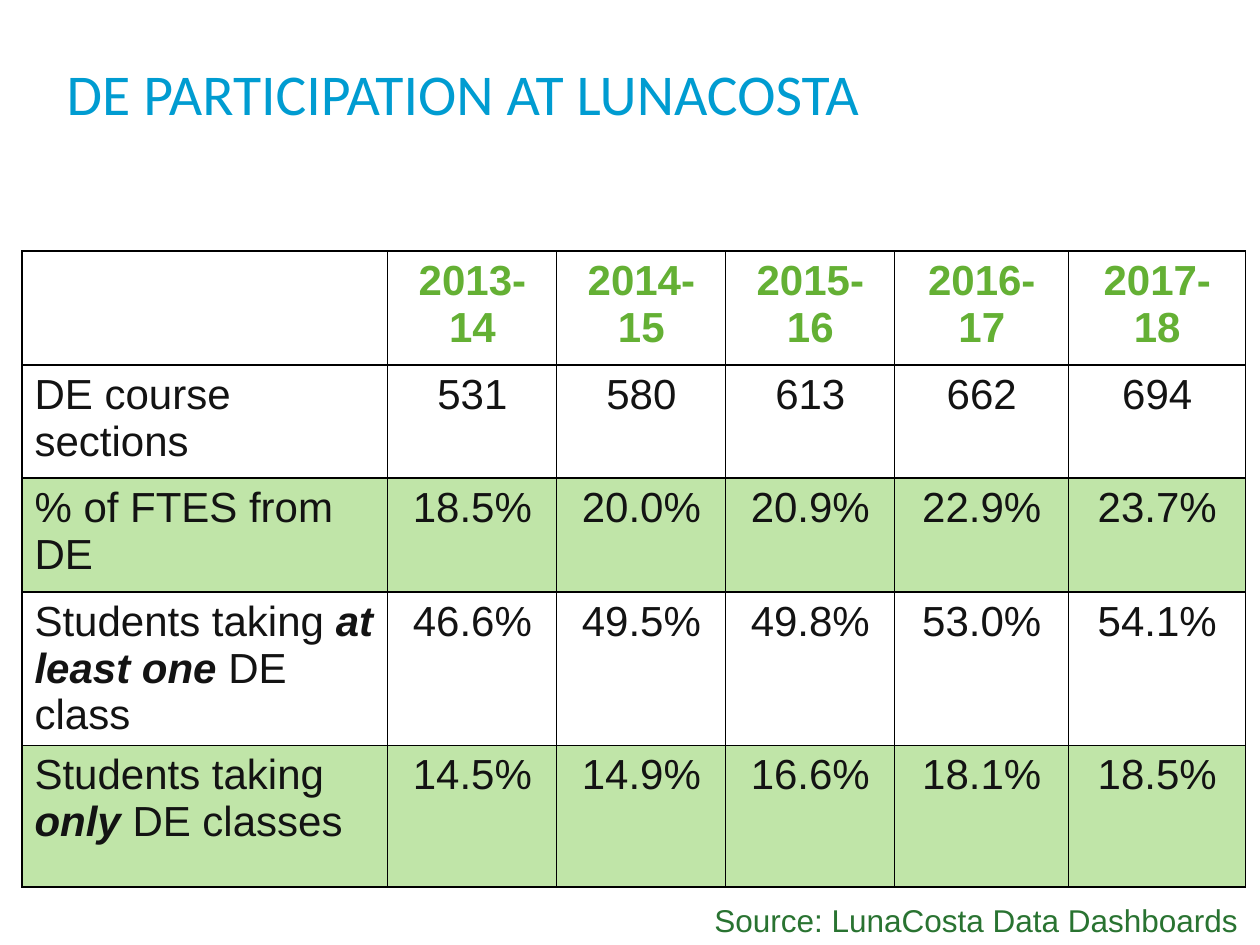
from dataclasses import dataclass

import pptx
import pptx.dml.color
import pptx.enum.text
import pptx.oxml
import pptx.oxml.ns
import pptx.util

EMU_PER_PX = 914400 // 126
ALIGN = pptx.enum.text.PP_ALIGN
ANCHOR = pptx.enum.text.MSO_ANCHOR


@dataclass(frozen=True)
class Theme:
    title_color: str = "009CD1"
    year_color: str = "64B034"
    body_color: str = "131313"
    source_color: str = "297331"
    band_color: str = "C0E5A8"
    border_color: str = "000000"
    title_font: str = "Calibri"
    body_font: str = "Arial"
    title_size: int = 33
    table_size: int = 24
    source_size: int = 18


@dataclass(frozen=True)
class Measure:
    """One table row; emphasis is the part of its label in bold italics."""
    before: str
    values: tuple[str, ...]
    emphasis: str = ""
    after: str = ""
    banded: bool = False


THEME = Theme()
YEARS = ("2013-14", "2014-15", "2015-16", "2016-17", "2017-18")
MEASURES = (
    Measure("DE course sections", ("531", "580", "613", "662", "694")),
    Measure("% of FTES from DE",
            ("18.5%", "20.0%", "20.9%", "22.9%", "23.7%"), banded=True),
    Measure("Students taking ",
            ("46.6%", "49.5%", "49.8%", "53.0%", "54.1%"),
            "at least one", " DE class"),
    Measure("Students taking ",
            ("14.5%", "14.9%", "16.6%", "18.1%", "18.5%"),
            "only", " DE classes", banded=True),
)
COLUMN_WIDTHS = (366, 169, 169, 169, 174, 177)
ROW_HEIGHTS = (114, 113, 114, 139, 142)


def px(length: int) -> pptx.util.Emu:
    return pptx.util.Emu(length * EMU_PER_PX)


def rgb(color: str) -> pptx.dml.color.RGBColor:
    return pptx.dml.color.RGBColor.from_string(color)


def add_text(paragraph, text: str, *, size: int = THEME.table_size,
             font: str = THEME.body_font, color: str = THEME.body_color,
             bold: bool = False, italic: bool = False) -> None:
    run = paragraph.add_run()
    run.text = text
    run.font.size = pptx.util.Pt(size)
    run.font.name = font
    run.font.color.rgb = rgb(color)
    run.font.bold = bold
    run.font.italic = italic


def add_borders(cell) -> None:
    """Outline a cell; call before filling it, as lines precede the fill."""
    properties = cell._tc.get_or_add_tcPr()
    for side in ("lnL", "lnR", "lnT", "lnB"):
        properties.append(pptx.oxml.parse_xml(
            f'<a:{side} {pptx.oxml.ns.nsdecls("a")} w="9525"><a:solidFill>'
            f'<a:srgbClr val="{THEME.border_color}"/></a:solidFill></a:{side}>'))


def format_cell(cell, banded: bool, centered: bool):
    """Style a cell and return its paragraph."""
    add_borders(cell)
    if banded:
        cell.fill.solid()
        cell.fill.fore_color.rgb = rgb(THEME.band_color)
    else:
        cell.fill.background()
    paragraph = cell.text_frame.paragraphs[0]
    paragraph.alignment = ALIGN.CENTER if centered else ALIGN.LEFT
    return paragraph


def add_title(slide, text: str) -> None:
    title = slide.shapes.title
    title.left, title.top, title.width, title.height = map(px, (54, 37, 989, 103))
    frame = title.text_frame
    frame.vertical_anchor = ANCHOR.BOTTOM
    frame.margin_left = frame.margin_right = pptx.util.Inches(0.1)
    frame.margin_top = frame.margin_bottom = pptx.util.Inches(0.1)
    frame.paragraphs[0].alignment = ALIGN.LEFT
    add_text(frame.paragraphs[0], text, size=THEME.title_size,
             font=THEME.title_font, color=THEME.title_color)


def add_participation_table(slide) -> None:
    table = slide.shapes.add_table(
        len(ROW_HEIGHTS), len(COLUMN_WIDTHS), px(22), px(251),
        px(sum(COLUMN_WIDTHS)), px(sum(ROW_HEIGHTS))).table
    table.horz_banding = False
    for column, width in zip(table.columns, COLUMN_WIDTHS):
        column.width = px(width)
    for row, height in zip(table.rows, ROW_HEIGHTS):
        row.height = px(height)

    format_cell(table.cell(0, 0), banded=False, centered=False)
    for column, year in enumerate(YEARS, start=1):
        heading = format_cell(table.cell(0, column), banded=False, centered=True)
        add_text(heading, year, color=THEME.year_color, bold=True)
    for row, measure in enumerate(MEASURES, start=1):
        label = format_cell(table.cell(row, 0), measure.banded, centered=False)
        add_text(label, measure.before)
        if measure.emphasis:
            add_text(label, measure.emphasis, bold=True, italic=True)
            add_text(label, measure.after)
        for column, value in enumerate(measure.values, start=1):
            add_text(format_cell(table.cell(row, column), measure.banded,
                                 centered=True), value)


def add_source(slide, text: str) -> None:
    source = slide.shapes.add_textbox(px(702), px(895), px(556), px(50))
    frame = source.text_frame
    frame.word_wrap = True
    frame.margin_right = 0
    add_text(frame.paragraphs[0], text, size=THEME.source_size,
             color=THEME.source_color)


def main() -> None:
    deck = pptx.Presentation()
    deck.slide_width, deck.slide_height = px(1260), px(945)
    slide = deck.slides.add_slide(deck.slide_layouts.get_by_name("Title Only"))
    add_title(slide, "DE PARTICIPATION AT LUNACOSTA")
    add_participation_table(slide)
    add_source(slide, "Source: LunaCosta Data Dashboards")
    deck.save("out.pptx")


if __name__ == "__main__":
    main()
